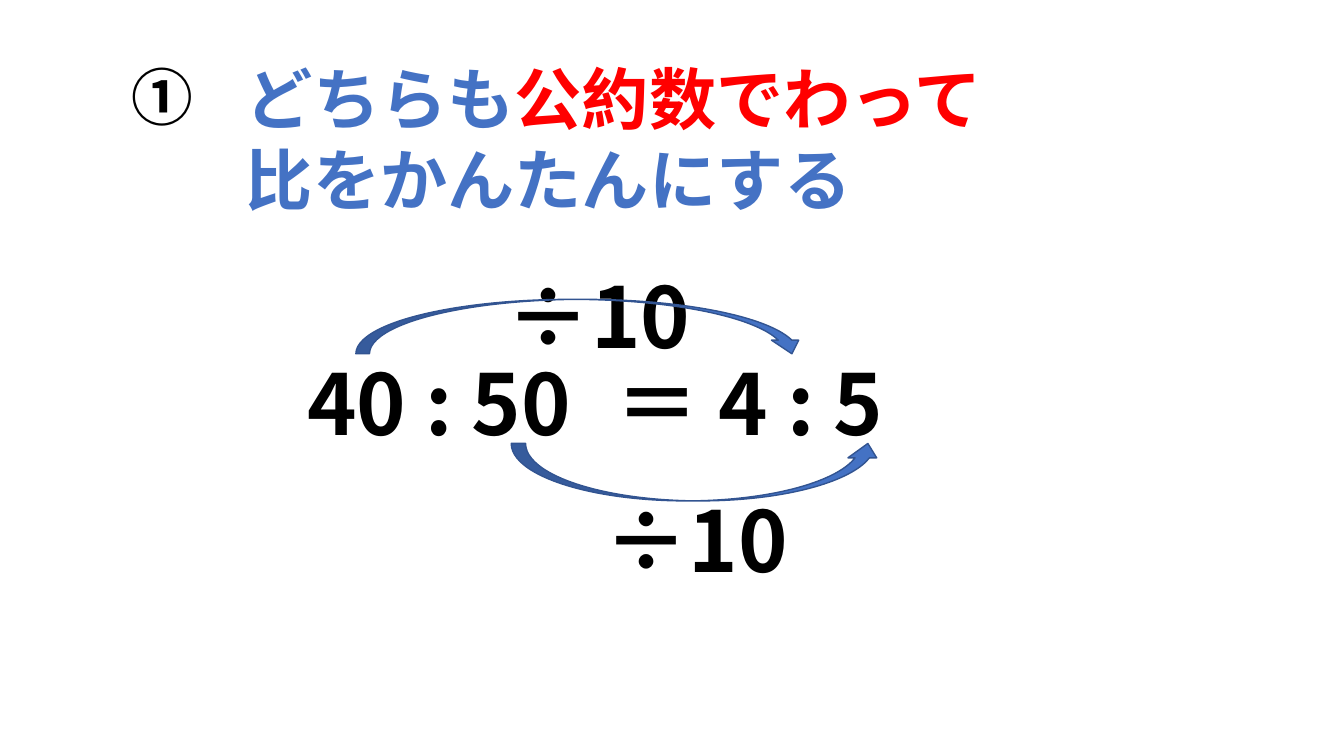
from dataclasses import dataclass

from lxml import etree
from pptx import Presentation
from pptx.dml.color import RGBColor
from pptx.enum.shapes import MSO_SHAPE
from pptx.enum.text import MSO_AUTO_SIZE
from pptx.oxml.ns import qn
from pptx.slide import Slide
from pptx.util import Inches, Pt


@dataclass(frozen=True)
class Theme:
    font: str = "Noto Sans CJK JP"
    black: RGBColor = RGBColor(0x00, 0x00, 0x00)
    blue: RGBColor = RGBColor(0x44, 0x72, 0xC4)
    red: RGBColor = RGBColor(0xFF, 0x00, 0x00)
    outline: RGBColor = RGBColor(0x32, 0x54, 0x91)
    formula_size: int = 60
    title_size: int = 48
    number_size: int = 44


THEME = Theme()


@dataclass(frozen=True)
class Span:
    text: str
    color: RGBColor = THEME.black


@dataclass(frozen=True)
class Label:
    left: float
    top: float
    width: float
    height: float
    lines: list[list[Span]]
    size: int = THEME.formula_size


@dataclass(frozen=True)
class Arrow:
    left: float
    top: float
    width: float
    height: float
    flipped: bool = False


# Ratio and its divisors
FORMULA = [
    Label(2.95, 3.44, 3.96, 1.11, [[Span("40 : 50")]]),
    Label(6.01, 3.44, 4.6, 1.11, [[Span("＝ 4 : 5")]]),
    Label(4.93, 2.57, 3.21, 1.11, [[Span("÷10")]]),
]
LOWER_DIVISOR = Label(5.9, 4.8, 2.67, 1.11, [[Span("÷10")]])

# Arrows joining matching terms
ARROWS = [
    Arrow(3.53, 2.97, 4.46, 0.54),
    Arrow(5.07, 4.4, 3.68, 0.57, flipped=True),
]

# Numbered heading
HEADING = [
    Label(2.34, 0.52, 9.03, 1.72, [
        [Span("どちらも", THEME.blue), Span("公約数でわって", THEME.red)],
        [Span("比をかんたんにする", THEME.blue)],
    ], THEME.title_size),
    Label(1.21, 0.54, 1.03, 0.84, [[Span("①")]], THEME.number_size),
]


def add_label(slide: Slide, label: Label) -> None:
    shape = slide.shapes.add_textbox(
        Inches(label.left), Inches(label.top), Inches(label.width), Inches(label.height))
    frame = shape.text_frame
    frame.word_wrap = True
    frame.auto_size = MSO_AUTO_SIZE.SHAPE_TO_FIT_TEXT
    for index, spans in enumerate(label.lines):
        paragraph = frame.add_paragraph() if index else frame.paragraphs[0]
        for span in spans:
            run = paragraph.add_run()
            run.text = span.text
            run.font.name = THEME.font
            run.font.size = Pt(label.size)
            run.font.bold = True
            run.font.color.rgb = span.color
            # Japanese characters take the East Asian typeface
            east_asian = etree.SubElement(run.font._element, qn("a:ea"))
            east_asian.set("typeface", THEME.font)


def add_arrow(slide: Slide, arrow: Arrow) -> None:
    shape = slide.shapes.add_shape(
        MSO_SHAPE.CURVED_DOWN_ARROW,
        Inches(arrow.left), Inches(arrow.top), Inches(arrow.width), Inches(arrow.height))
    shape.shadow.inherit = False
    shape.fill.solid()
    shape.fill.fore_color.rgb = THEME.blue
    shape.line.color.rgb = THEME.outline
    shape.line.width = Pt(1)
    if arrow.flipped:
        shape._element.spPr.find(qn("a:xfrm")).set("flipV", "1")


def main() -> None:
    presentation = Presentation()
    presentation.slide_width = Inches(13.33)
    presentation.slide_height = Inches(7.5)
    slide = presentation.slides.add_slide(presentation.slide_layouts[6])

    for label in FORMULA:
        add_label(slide, label)
    for arrow in ARROWS:
        add_arrow(slide, arrow)
    for label in [LOWER_DIVISOR, *HEADING]:
        add_label(slide, label)

    presentation.save("out.pptx")


if __name__ == "__main__":
    main()
